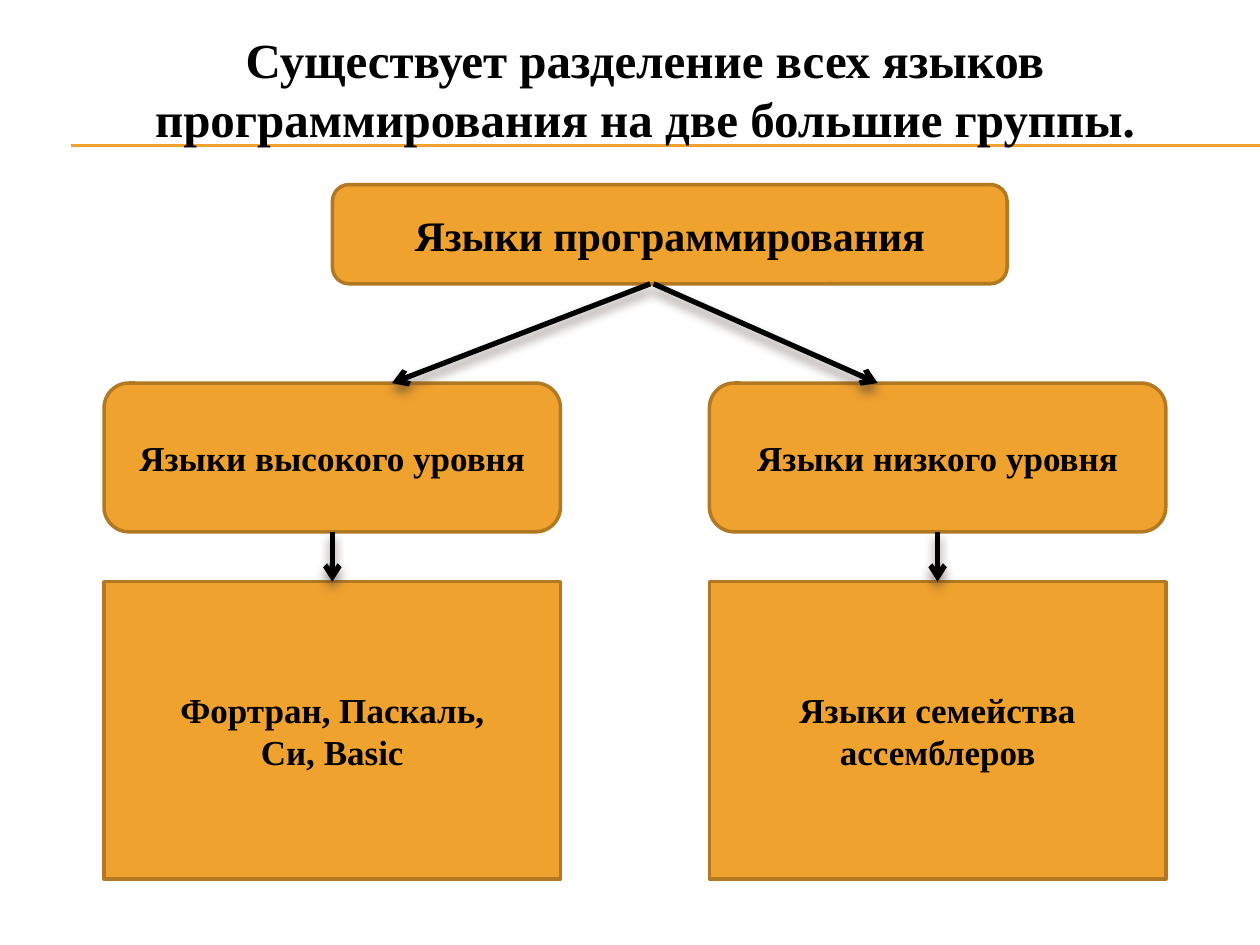
from lxml.etree import SubElement
from pptx import Presentation
from pptx.dml.color import RGBColor
from pptx.enum.shapes import MSO_CONNECTOR, MSO_SHAPE
from pptx.enum.text import MSO_ANCHOR, PP_ALIGN
from pptx.oxml.ns import qn
from pptx.util import Pt

BLACK = RGBColor(0x00, 0x00, 0x00)
ORANGE = RGBColor(0xF0, 0xA2, 0x2E)
BROWN = RGBColor(0xB2, 0x78, 0x22)
SHADOW = RGBColor(0x4E, 0x3B, 0x30)


class Diagram:
    """Draws the elements of a block diagram on one slide in a shared style."""

    font = {"name": "Times New Roman", "bold": True}

    def __init__(self, slide):
        self.slide = slide

    def add_text(self, sp, lines, size, anchor):
        tf = sp.text_frame
        tf.word_wrap = True
        tf.vertical_anchor = anchor
        for i, line in enumerate(lines):
            p = tf.add_paragraph() if i else tf.paragraphs[0]
            p.alignment = PP_ALIGN.CENTER
            r = p.add_run()
            r.text = line
            for key, value in {**self.font, "size": Pt(size)}.items():
                setattr(r.font, key, value)
            r.font.color.rgb = BLACK

    def title(self, text, x, y, w, h):
        sp = self.slide.shapes.add_textbox(Pt(x), Pt(y), Pt(w), Pt(h))
        self.add_text(sp, [text], 28, MSO_ANCHOR.TOP)

    def box(self, kind, lines, x, y, w, h, size=20):
        sp = self.slide.shapes.add_shape(kind, Pt(x), Pt(y), Pt(w), Pt(h))
        sp.shadow.inherit = False
        sp.fill.solid()
        sp.fill.fore_color.rgb = ORANGE
        sp.line.color.rgb = BROWN
        sp.line.width = Pt(2)
        self.add_text(sp, lines, size, MSO_ANCHOR.MIDDLE)
        return sp

    def line(self, x1, y1, x2, y2, color=ORANGE, width=0.75):
        cxn = self.slide.shapes.add_connector(
            MSO_CONNECTOR.STRAIGHT, Pt(x1), Pt(y1), Pt(x2), Pt(y2))
        cxn.line.color.rgb = color
        cxn.line.width = Pt(width)
        effects = SubElement(cxn._element.spPr, qn("a:effectLst"))
        return cxn, effects

    def arrow(self, x1, y1, x2, y2):
        cxn, effects = self.line(x1, y1, x2, y2, BLACK, 3)
        SubElement(cxn.line._get_or_add_ln(), qn("a:tailEnd"), type="arrow")
        shadow = SubElement(effects, qn("a:outerShdw"), blurRad=str(Pt(6)),
                            dist=str(Pt(4)), dir="5400000", rotWithShape="0")
        color = SubElement(shadow, qn("a:srgbClr"), val=str(SHADOW))
        SubElement(color, qn("a:alpha"), val="60000")
        return cxn


def main():
    prs = Presentation()
    prs.slide_width, prs.slide_height = Pt(720), Pt(540)
    s = Diagram(prs.slides.add_slide(prs.slide_layouts[6]))

    for y in (82.8, 83.5):
        s.line(40.5, y, 720, y)
    s.title("Существует разделение всех языков программирования на две большие группы.",
            54, 13.5, 629, 75)
    s.box(MSO_SHAPE.ROUNDED_RECTANGLE, ["Языки программирования"],
          190, 105.5, 385.5, 56.7, 24)

    width, level_top, level_height, example_top = 260.8, 218.9, 85, 332.4
    columns = [
        (59.5, "Языки высокого уровня", ["Фортран, Паскаль,", "Си, Basic"], 371.5, 224),
        (405.4, "Языки низкого уровня", ["Языки семейства ассемблеров"], 373.5, 501.5),
    ]
    for x, level, examples, start, end in columns:
        top = s.box(MSO_SHAPE.ROUNDED_RECTANGLE, [level], x, level_top, width, level_height)
        bottom = s.box(MSO_SHAPE.RECTANGLE, examples, x, example_top, width, 170)
        s.arrow(start, 162.2, end, level_top)
        middle = x + width / 2
        cxn = s.arrow(middle, level_top + level_height, middle, example_top)
        cxn.begin_connect(top, 2)
        cxn.end_connect(bottom, 0)

    prs.save("out.pptx")


if __name__ == "__main__":
    main()
